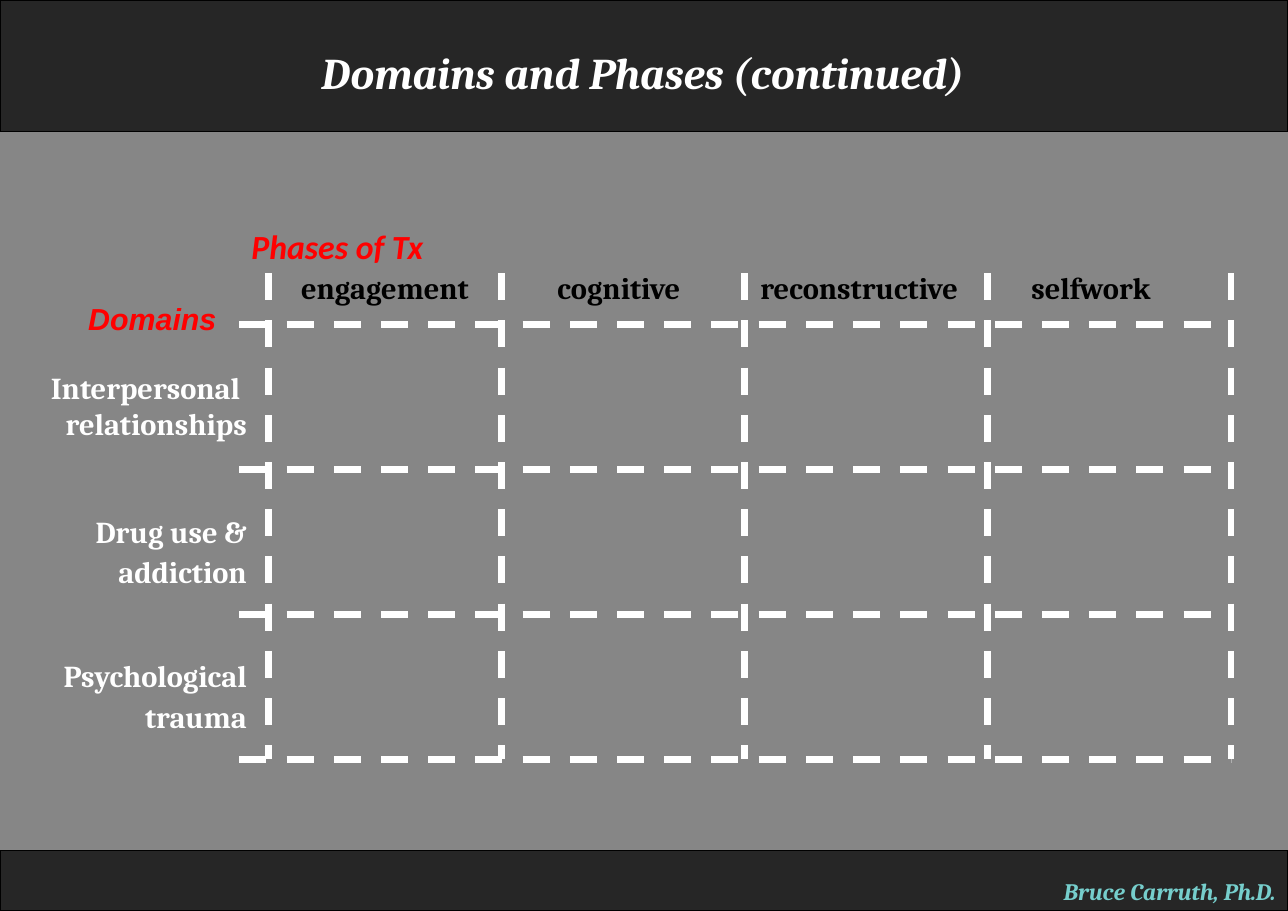
from dataclasses import dataclass

from lxml import etree
from pptx import Presentation
from pptx.dml.color import RGBColor
from pptx.enum.dml import MSO_LINE
from pptx.enum.shapes import MSO_CONNECTOR, MSO_SHAPE
from pptx.enum.text import MSO_ANCHOR, PP_ALIGN
from pptx.oxml.ns import qn
from pptx.util import Inches, Pt

RECT = MSO_SHAPE.RECTANGLE
STRAIGHT = MSO_CONNECTOR.STRAIGHT
DASH = MSO_LINE.DASH
BOTTOM = MSO_ANCHOR.BOTTOM
LEFT, CENTER, RIGHT = PP_ALIGN.LEFT, PP_ALIGN.CENTER, PP_ALIGN.RIGHT

COLORS = {
    "background": "868686",
    "band": "262626",
    "black": "000000",
    "white": "FFFFFF",
    "red": "FF0000",
    "author": "76CECC",
}


@dataclass
class Band:
    top: float
    height: float


@dataclass
class Label:
    text: str
    left: float
    top: float
    width: float
    height: float
    size: float
    color: str
    font: str = "Cambria"
    align: int = LEFT
    italic: bool = False
    spacing: float | None = None


def rgb(name: str) -> RGBColor:
    return RGBColor.from_string(COLORS[name])


def write(s, label: Label) -> None:
    tf = s.text_frame
    tf.word_wrap = True
    tf.text = label.text
    for p in tf.paragraphs:
        p.alignment = label.align
        if label.spacing:
            p.line_spacing = Pt(label.spacing)
        p.font.name = label.font
        p.font.size = Pt(label.size)
        p.font.bold = True
        p.font.italic = label.italic
        p.font.color.rgb = rgb(label.color)


def add_band(slide, band: Band):
    s = slide.shapes.add_shape(RECT, 0, Inches(band.top), Inches(WIDTH), Inches(band.height))
    s.shadow.inherit = False
    s.fill.solid()
    s.fill.fore_color.rgb = rgb("band")
    s.line.color.rgb = rgb("black")
    s.line.width = Pt(0.75)
    return s


def add_label(slide, label: Label):
    s = slide.shapes.add_textbox(
        Inches(label.left), Inches(label.top), Inches(label.width), Inches(label.height)
    )
    write(s, label)
    return s


def add_grid_line(slide, x1: float, y1: float, x2: float, y2: float) -> None:
    s = slide.shapes.add_connector(STRAIGHT, Inches(x1), Inches(y1), Inches(x2), Inches(y2))
    s.line.color.rgb = rgb("white")
    s.line.width = Pt(4)
    s.line.dash_style = DASH
    etree.SubElement(s._element.spPr, qn("a:effectLst"))


def set_tabs(p, stops: list[float]) -> None:
    tabs = etree.Element(qn("a:tabLst"))
    for stop in stops:
        etree.SubElement(tabs, qn("a:tab"), pos=str(Inches(stop)), algn="l")
    pPr = p._p.get_or_add_pPr()
    pPr.insert(0, tabs)


WIDTH, HEIGHT = 10.6, 7.5
GRID_LEFT, GRID_RIGHT = 1.97, 10.13
GRID_TOP, GRID_BOTTOM = 2.25, 6.25
FIRST_ROW, ROW_COUNT = 2.67, 3
ROW_STEP = (GRID_BOTTOM - FIRST_ROW) / ROW_COUNT
COLUMNS = [2.21] + [GRID_RIGHT - 2 * i for i in range(3, -1, -1)]

HEADER = Band(0, 1.08)
FOOTER = Band(7, 0.5)
AUTHOR = Label("Bruce Carruth, Ph.D.", 0, 7, WIDTH, 0.5, 14, "author", align=RIGHT, italic=True)
PHASES = Label(
    "engagement\tcognitive\treconstructive\tselfwork", 2.38, 2.17, 8, 0.4, 18, "black"
)
PHASE_TABS = [2.11, 3.78, 6.01]
DOMAINS = [
    Label(text, 0.25, top, 1.88, height, 18, "white", align=RIGHT, spacing=spacing)
    for text, top, height, spacing in [
        ("Interpersonal \nrelationships", 3, 0.69, 21),
        ("Drug use &\naddiction", 4.14, 0.77, 24),
        ("Psychological\ntrauma", 5.33, 0.77, 24),
    ]
]
HEADINGS = [
    Label("Domains and Phases (continued)", 0.13, 0.33, 10.33, 0.75, 26, "white",
          align=CENTER, italic=True),
    Label("Domains", 0.3, 2.42, 1.58, 0.4, 18, "red", "Arial", RIGHT, True),
    Label("Phases of Tx", 1.97, 1.81, 2, 0.44, 20, "red", "Calibri", italic=True),
]


def main() -> None:
    prs = Presentation()
    prs.slide_width, prs.slide_height = Inches(WIDTH), Inches(HEIGHT)
    slide = prs.slides.add_slide(prs.slide_layouts[6])
    slide.background.fill.solid()
    slide.background.fill.fore_color.rgb = rgb("background")

    footer = add_band(slide, FOOTER)
    footer.text_frame.vertical_anchor = BOTTOM
    write(footer, AUTHOR)
    add_band(slide, HEADER)

    for label in HEADINGS + DOMAINS:
        add_label(slide, label)
    phases = add_label(slide, PHASES)
    set_tabs(phases.text_frame.paragraphs[0], PHASE_TABS)

    for i in range(ROW_COUNT + 1):
        y = FIRST_ROW + i * ROW_STEP
        add_grid_line(slide, GRID_LEFT, y, GRID_RIGHT, y)
    for x in COLUMNS:
        add_grid_line(slide, x, GRID_TOP, x, GRID_BOTTOM)

    prs.save("out.pptx")


if __name__ == "__main__":
    main()
